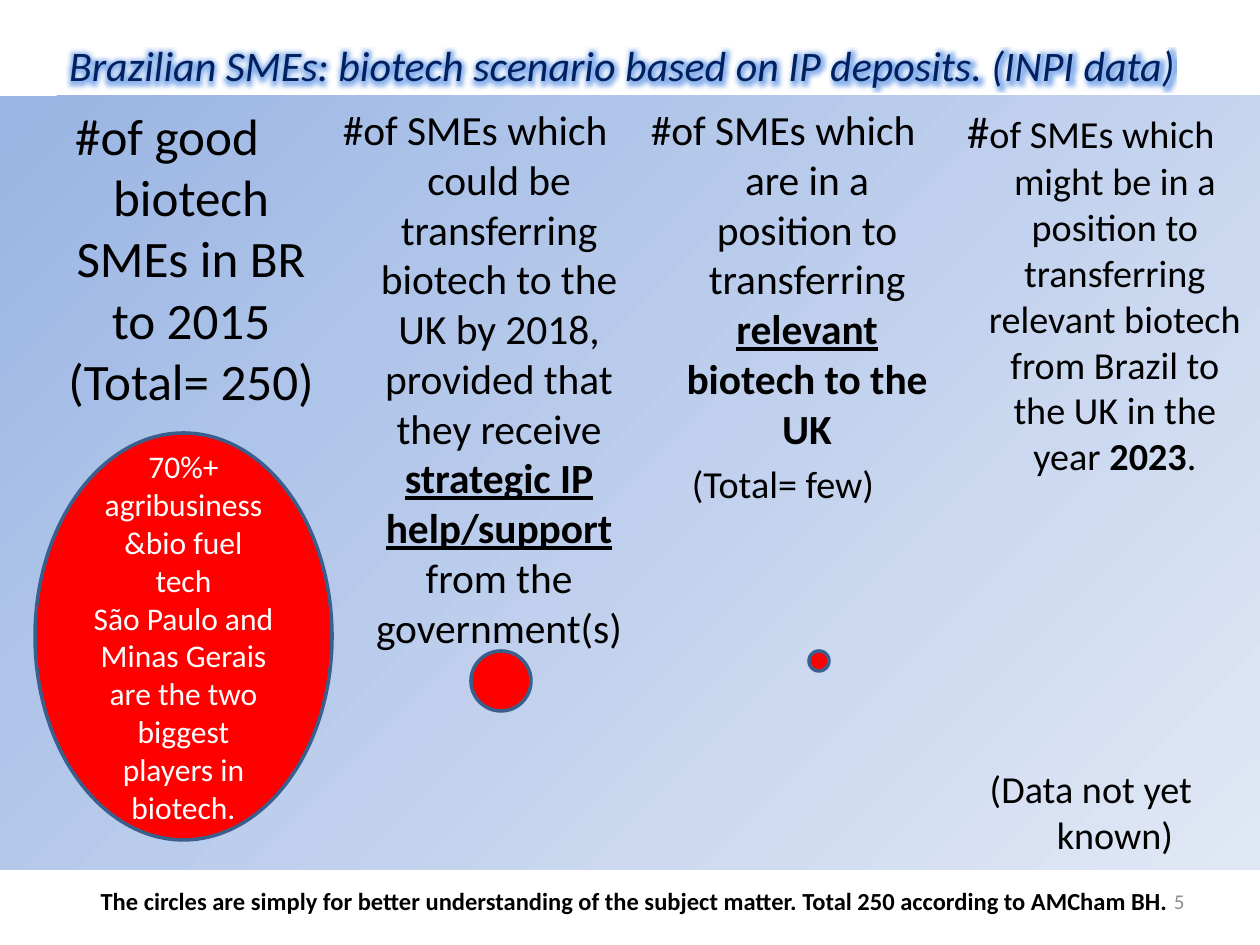
import pptx
import pptx.util
import pptx.dml.color
import pptx.enum.shapes
import pptx.enum.text
import pptx.oxml
from pptx.oxml.ns import nsdecls

PX = 914400 // 126
COLORS = {
    "title": "002060", "glow": "3F80E0", "text": "000000", "number": "8C8C8C",
    "panel_start": "9AB5E4", "panel_end": "E1E8F5",
    "circle": "FF0000", "circle_line": "3A5F8C", "circle_text": "FFFFFF",
}
ALIGN = pptx.enum.text.PP_ALIGN
ANCHOR = pptx.enum.text.MSO_ANCHOR
SHAPES = pptx.enum.shapes.MSO_SHAPE
BOLD = {"bold": True}
KEY = {"bold": True, "underline": True}
HANG = 48
COLUMNS = [
    (29.2, [["#of good biotech SMEs in BR to 2015 (Total= 250)"]]),
    (23.7, [["#of SMEs which could be transferring biotech to the UK by 2018, "
             "provided that they receive ",
             ("strategic IP help/support", KEY), " from the government(s)"]]),
    (23.7, [["#of SMEs which are in a position to transferring ",
             ("relevant", KEY), (" biotech to the UK", BOLD)],
            [("(Total= few)", {"size": 21.8})]]),
    (21.8, [[("#", {"size": 25.5}),
             "of SMEs which might be in a position to transferring relevant "
             "biotech from Brazil to the UK in the year ", ("2023", BOLD), "."]]),
]


def rgb(name):
    return pptx.dml.color.RGBColor.from_string(COLORS[name])


def px(*lengths):
    return [length * PX for length in lengths]


def write(shape, paragraphs, size, color="text", align=ALIGN.CENTER,
          anchor=ANCHOR.TOP, bold=False, italic=False, hang=0, space=0):
    """Fill shape with paragraphs of runs; a run is text or (text, format)."""
    frame = shape.text_frame
    frame.word_wrap = True
    frame.auto_size = pptx.enum.text.MSO_AUTO_SIZE.NONE
    frame.vertical_anchor = anchor
    for index, runs in enumerate(paragraphs):
        paragraph = frame.add_paragraph() if index else frame.paragraphs[0]
        paragraph.alignment = align
        paragraph.space_before = pptx.util.Pt(space if index else 0)
        if hang:
            properties = paragraph._p.get_or_add_pPr()
            properties.set("marL", str(hang * PX))
            properties.set("indent", str(-hang * PX))
        for item in runs:
            text, extra = (item, {}) if isinstance(item, str) else item
            for part, line in enumerate(text.split("\n")):
                if part:
                    paragraph.add_line_break()
                run = paragraph.add_run()
                run.text = line
                font = run.font
                font.name = "Calibri"
                font.size = pptx.util.Pt(extra.get("size", size))
                font.bold = extra.get("bold", bold)
                font.italic = italic
                font.underline = extra.get("underline", False)
                font.color.rgb = rgb(color)


def add_text(slide, box, paragraphs, size, **style):
    write(slide.shapes.add_textbox(*px(*box)), paragraphs, size, **style)


def add_title(slide, box):
    title = slide.shapes.title
    title.left, title.top, title.width, title.height = px(*box)
    title.text_frame.margin_left = 69 * PX
    title.text_frame.margin_right = 0
    write(title, [["Brazilian SMEs: biotech scenario based on IP deposits. (INPI data)"]],
          24, color="title", align=ALIGN.LEFT, anchor=ANCHOR.MIDDLE, italic=True)
    glow = pptx.oxml.parse_xml(
        f'<a:effectLst {nsdecls("a")}><a:glow rad="63500"><a:srgbClr val="{COLORS["glow"]}">'
        '<a:alpha val="60000"/></a:srgbClr></a:glow></a:effectLst>')
    font_xml = title.text_frame.paragraphs[0].runs[0].font._element
    font_xml.find(pptx.oxml.ns.qn("a:solidFill")).addnext(glow)


def add_panel(slide, box):
    """Draw the shaded panel and its four columns of text."""
    left, top, width, height = box
    panel = slide.shapes.add_shape(SHAPES.RECTANGLE, *px(*box))
    panel.shadow.inherit = False
    panel.line.fill.background()
    panel.fill.gradient()
    panel.fill.gradient_angle = 315
    for stop, name in zip(panel.fill.gradient_stops, ("panel_start", "panel_end")):
        stop.color.rgb = rgb(name)

    inset = 13
    column_width = (width - 2 * inset) // len(COLUMNS)
    for index, (size, paragraphs) in enumerate(COLUMNS):
        column_left = left + inset + index * column_width
        # The text box's own side margins lie outside the column.
        add_text(slide, (column_left - inset, top + 2, column_width + 2 * inset, 580),
                 paragraphs, size, hang=HANG, space=4.4)
    add_text(slide, (column_left - inset, top + height - 111, column_width + 2 * inset, 106),
             [["(Data not yet known)"]], 21.8, hang=HANG)


def add_circle(slide, box, paragraphs=()):
    circle = slide.shapes.add_shape(SHAPES.OVAL, *px(*box))
    circle.shadow.inherit = False
    circle.fill.solid()
    circle.fill.fore_color.rgb = rgb("circle")
    circle.line.color.rgb = rgb("circle_line")
    circle.line.width = pptx.util.Pt(2)
    write(circle, paragraphs, 18, color="circle_text", anchor=ANCHOR.MIDDLE)


def add_circles(slide, box):
    left, top = box[:2]
    add_circle(slide, (left + 35, top + 337, 297, 407), [
        ["70%+\nagribusiness\n&bio fuel\ntech"],
        ["São Paulo and"],
        ["Minas Gerais are the two biggest\nplayers in biotech."],
    ])
    for circle_left, size in ((471, 60), (809, 20)):
        add_circle(slide, (left + circle_left, top + 555, size, size))


def add_footer(slide, box):
    left, top, width, height = box
    add_text(slide, (left + 903, top, 294, height), [["5"]], 12,
             color="number", align=ALIGN.RIGHT, anchor=ANCHOR.MIDDLE)
    add_text(slide, (left + 74, top, 1121, height),
             [["The circles are simply for better understanding of the subject matter. "
               "Total 250 according to AMCham BH."]],
             14, anchor=ANCHOR.MIDDLE, bold=True)


def main():
    deck = pptx.Presentation()
    deck.slide_width, deck.slide_height = px(1260, 945)
    slide = deck.slides.add_slide(deck.slide_layouts[5])
    panel_box = (0, 96, 1260, 774)
    add_title(slide, (0, 38, 1260, 54))
    add_panel(slide, panel_box)
    add_footer(slide, (0, 876, 1260, 50))
    add_circles(slide, panel_box)
    deck.save("out.pptx")


if __name__ == "__main__":
    main()
